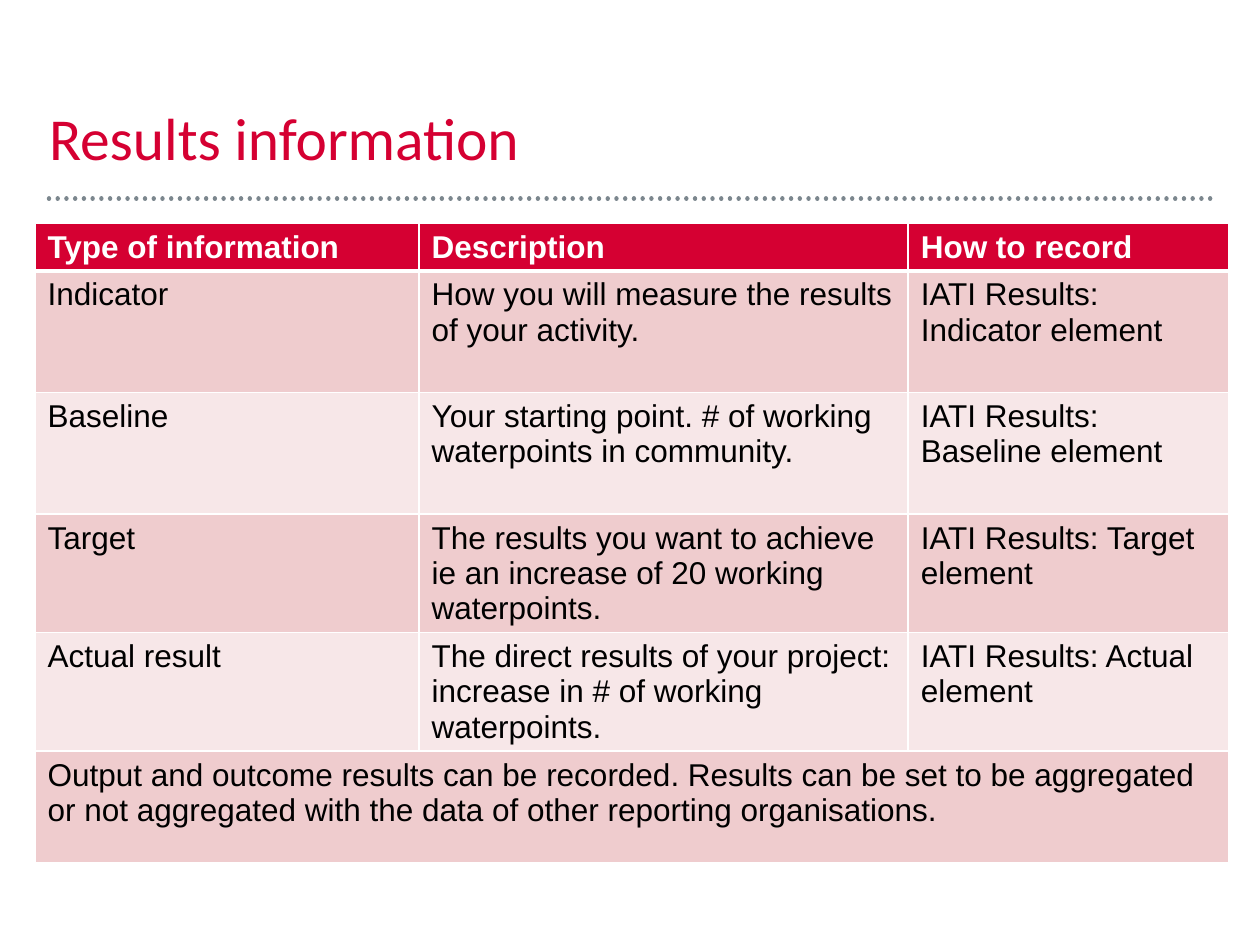
from lxml import etree
from pptx import Presentation
from pptx.dml.color import RGBColor
from pptx.enum import dml, shapes, text
from pptx.oxml import ns
from pptx.util import Pt

RED, GREY, WHITE, BLACK = "D50032", "7C878E", "FFFFFF", "000000"
BANDS = ["EFCCCE", "F7E7E8"]

HEADERS = ["Type of information", "Description", "How to record"]
ROWS = [
    ["Indicator", "How you will measure the results of your activity.",
     "IATI Results: Indicator element"],
    ["Baseline", "Your starting point. # of working waterpoints in community.",
     "IATI Results: Baseline element"],
    ["Target", "The results you want to achieve ie an increase of 20 working waterpoints.",
     "IATI Results: Target element"],
    ["Actual result", "The direct results of your project: increase in # of working waterpoints.",
     "IATI Results: Actual element"],
    ["Output and outcome results can be recorded. Results can be set to be aggregated "
     "or not aggregated with the data of other reporting organisations."],
]
COL_WIDTHS = [219.5, 279.5, 183]
ROW_HEIGHTS = [26.5, 69.5, 69.5, 67.5, 67.5, 63.5]


def rgb(color):
    return RGBColor.from_string(color)


def add_run(p, words, font, size, color, bold=False):
    r = p.add_run()
    r.text = words
    r.font.name, r.font.size, r.font.bold = font, Pt(size), bold
    r.font.color.rgb = rgb(color)


def add_title(s, words, x, y, w, h):
    sp = s.shapes.title
    sp.left, sp.top, sp.width, sp.height = Pt(x), Pt(y), Pt(w), Pt(h)
    tf = sp.text_frame
    tf.margin_left = tf.margin_right = tf.margin_top = tf.margin_bottom = 0
    tf.vertical_anchor = text.MSO_ANCHOR.BOTTOM
    tf.word_wrap = True
    p = tf.paragraphs[0]
    p.alignment = text.PP_ALIGN.LEFT
    p.line_spacing = Pt(36)
    add_run(p, words, "Calibri", 34, RED)


def add_dotted_rule(s, x, y, w):
    line = s.shapes.add_connector(shapes.MSO_CONNECTOR.STRAIGHT,
                                  Pt(x), Pt(y), Pt(x + w), Pt(y))
    line.line.color.rgb = rgb(GREY)
    line.line.width = Pt(2.5)
    line.line.dash_style = dml.MSO_LINE.ROUND_DOT
    # Round dots, no shadow
    sp_pr = line._element.spPr
    sp_pr.find(ns.qn("a:ln")).set("cap", "rnd")
    etree.SubElement(sp_pr, ns.qn("a:effectLst"))


def set_borders(cell, color, bottom=1, top=1):
    tc_pr = cell._tc.get_or_add_tcPr()
    for side, width in [("L", 1), ("R", 1), ("T", top), ("B", bottom)]:
        ln = etree.SubElement(tc_pr, ns.qn(f"a:ln{side}"), w=str(Pt(width)))
        fill = etree.SubElement(ln, ns.qn("a:solidFill"))
        etree.SubElement(fill, ns.qn("a:srgbClr"), val=color)


def add_results_table(s, x, y):
    rows = [HEADERS] + ROWS
    table = s.shapes.add_table(len(rows), len(HEADERS), Pt(x), Pt(y),
                               Pt(sum(COL_WIDTHS)), Pt(sum(ROW_HEIGHTS))).table
    for col, width in zip(table.columns, COL_WIDTHS):
        col.width = Pt(width)
    for i, (row, height, words) in enumerate(zip(table.rows, ROW_HEIGHTS, rows)):
        row.height = Pt(height)
        head = i == 0
        for cell in row.cells:
            # Thick rule between header and body
            set_borders(cell, WHITE, bottom=3 if head else 1, top=3 if i == 1 else 1)
            cell.fill.solid()
            cell.fill.fore_color.rgb = rgb(RED if head else BANDS[(i - 1) % 2])
        for cell, entry in zip(row.cells, words):
            add_run(cell.text_frame.paragraphs[0], entry, "Arial", 18,
                    WHITE if head else BLACK, head)
    # Closing note spans all columns
    last = len(rows) - 1
    table.cell(last, 0).merge(table.cell(last, len(HEADERS) - 1))


def main():
    prs = Presentation()
    prs.slide_width, prs.slide_height = Pt(720), Pt(540)
    s = prs.slides.add_slide(prs.slide_layouts[5])
    add_dotted_rule(s, 28, 113.5, 664)
    add_title(s, "Results information", 28, 28, 664, 70.5)
    add_results_table(s, 20, 127.5)
    prs.save("out.pptx")


if __name__ == "__main__":
    main()
